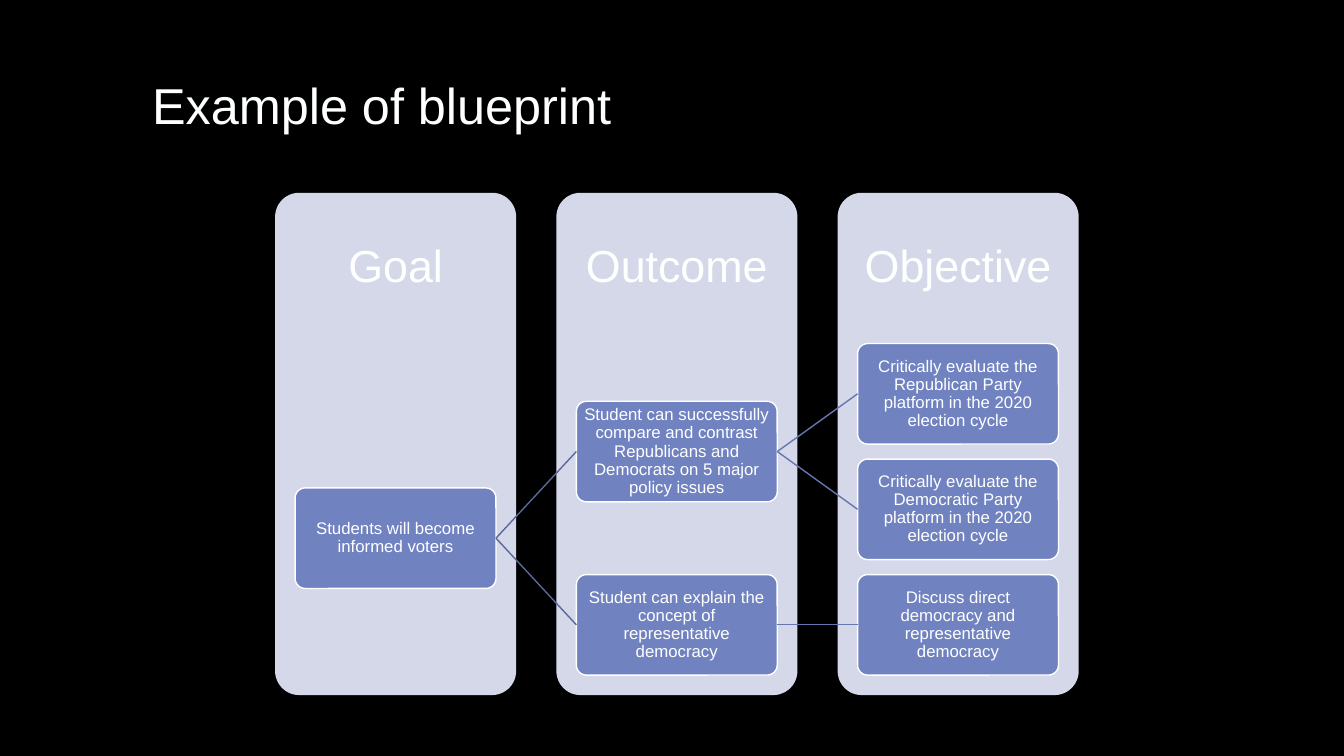
from dataclasses import dataclass

from lxml.etree import SubElement
from pptx import Presentation
from pptx.dml.color import RGBColor
from pptx.enum.shapes import MSO_CONNECTOR as Connector, MSO_SHAPE as Shape
from pptx.enum.text import MSO_ANCHOR as Anchor, PP_ALIGN as Align
from pptx.oxml.ns import qn
from pptx.util import Pt


@dataclass(frozen=True)
class Theme:
    font: str = "Arial"
    background: RGBColor = RGBColor.from_string("000000")
    text: RGBColor = RGBColor.from_string("FEFFFF")
    column: RGBColor = RGBColor.from_string("D5D8E8")
    box: RGBColor = RGBColor.from_string("7182C0")
    goal_link: RGBColor = RGBColor.from_string("5A689A")
    outcome_link: RGBColor = RGBColor.from_string("6776AE")
    title_size: int = 36
    heading_size: int = 32
    box_size: int = 12


theme = Theme()

COLUMN_LEFT, COLUMN_TOP = 196.5, 137.7
COLUMN_WIDTH, COLUMN_HEIGHT, COLUMN_PITCH = 172.2, 358.8, 200.9
HEADING_HEIGHT = 107.7
BOX_INDENT, BOX_TOP = 14.3, 245.4
BOX_WIDTH, BOX_HEIGHT, ROW_PITCH = 143.5, 71.8, 82.5

HEADINGS = ["Goal", "Outcome", "Objective"]

# name: (column, row, text); a parent sits halfway between its children
BOXES = {
    "voters": (0, 1.25, "Students will become informed voters"),
    "compare": (1, 0.5, "Student can successfully compare and contrast "
                        "Republicans and Democrats on 5 major policy issues"),
    "explain": (1, 2, "Student can explain the concept of representative democracy"),
    "republican": (2, 0, "Critically evaluate the Republican Party platform "
                         "in the 2020 election cycle"),
    "democratic": (2, 1, "Critically evaluate the Democratic Party platform "
                         "in the 2020 election cycle"),
    "direct": (2, 2, "Discuss direct democracy and representative democracy"),
}

LINKS = [
    ("voters", "compare", theme.goal_link),
    ("voters", "explain", theme.goal_link),
    ("compare", "republican", theme.outcome_link),
    ("compare", "democratic", theme.outcome_link),
    ("explain", "direct", theme.outcome_link),
]
LEFT_SITE, RIGHT_SITE = 1, 3

presentation = Presentation()
presentation.slide_width, presentation.slide_height = Pt(960), Pt(540)
slide = presentation.slides.add_slide(presentation.slide_layouts[6])
slide.background.fill.solid()
slide.background.fill.fore_color.rgb = theme.background


def write(shape, text, *, size, align=Align.CENTER, inset=7.2):
    frame = shape.text_frame
    frame.word_wrap = True
    frame.vertical_anchor = Anchor.MIDDLE
    frame.margin_left = frame.margin_right = Pt(inset)
    frame.margin_top = frame.margin_bottom = Pt(inset)
    paragraph = frame.paragraphs[0]
    paragraph.text = text
    paragraph.alignment = align
    paragraph.line_spacing = 0.9
    paragraph.font.name = theme.font
    paragraph.font.size = Pt(size)
    paragraph.font.color.rgb = theme.text


def add_card(left, top, width, height, fill):
    """Add a rounded rectangle without outline or shadow."""
    card = slide.shapes.add_shape(
        Shape.ROUNDED_RECTANGLE, Pt(left), Pt(top), Pt(width), Pt(height))
    card.adjustments[0] = 0.1
    card.shadow.inherit = False
    card.fill.solid()
    card.fill.fore_color.rgb = fill
    card.line.fill.background()
    return card


title = slide.shapes.add_textbox(Pt(101.5), Pt(34.5), Pt(756.7), Pt(85))
write(title, "Example of blueprint", size=theme.title_size, align=Align.LEFT)

for index, text in enumerate(HEADINGS):
    left = COLUMN_LEFT + index * COLUMN_PITCH
    add_card(left, COLUMN_TOP, COLUMN_WIDTH, COLUMN_HEIGHT, theme.column)
    heading = slide.shapes.add_textbox(
        Pt(left), Pt(COLUMN_TOP), Pt(COLUMN_WIDTH), Pt(HEADING_HEIGHT))
    write(heading, text, size=theme.heading_size, inset=18)

boxes = {}
for name, (column, row, text) in BOXES.items():
    box = add_card(COLUMN_LEFT + column * COLUMN_PITCH + BOX_INDENT,
                   BOX_TOP + row * ROW_PITCH, BOX_WIDTH, BOX_HEIGHT, theme.box)
    box.line.color.rgb = theme.text
    box.line.width = Pt(1)
    write(box, text, size=theme.box_size, inset=2.6)
    boxes[name] = box

for parent, child, color in LINKS:
    link = slide.shapes.add_connector(Connector.STRAIGHT, 0, 0, 0, 0)
    link.begin_connect(boxes[parent], RIGHT_SITE)
    link.end_connect(boxes[child], LEFT_SITE)
    link.line.color.rgb = color
    link.line.width = Pt(1)
    SubElement(link.element.spPr, qn("a:effectLst"))

presentation.save("out.pptx")
